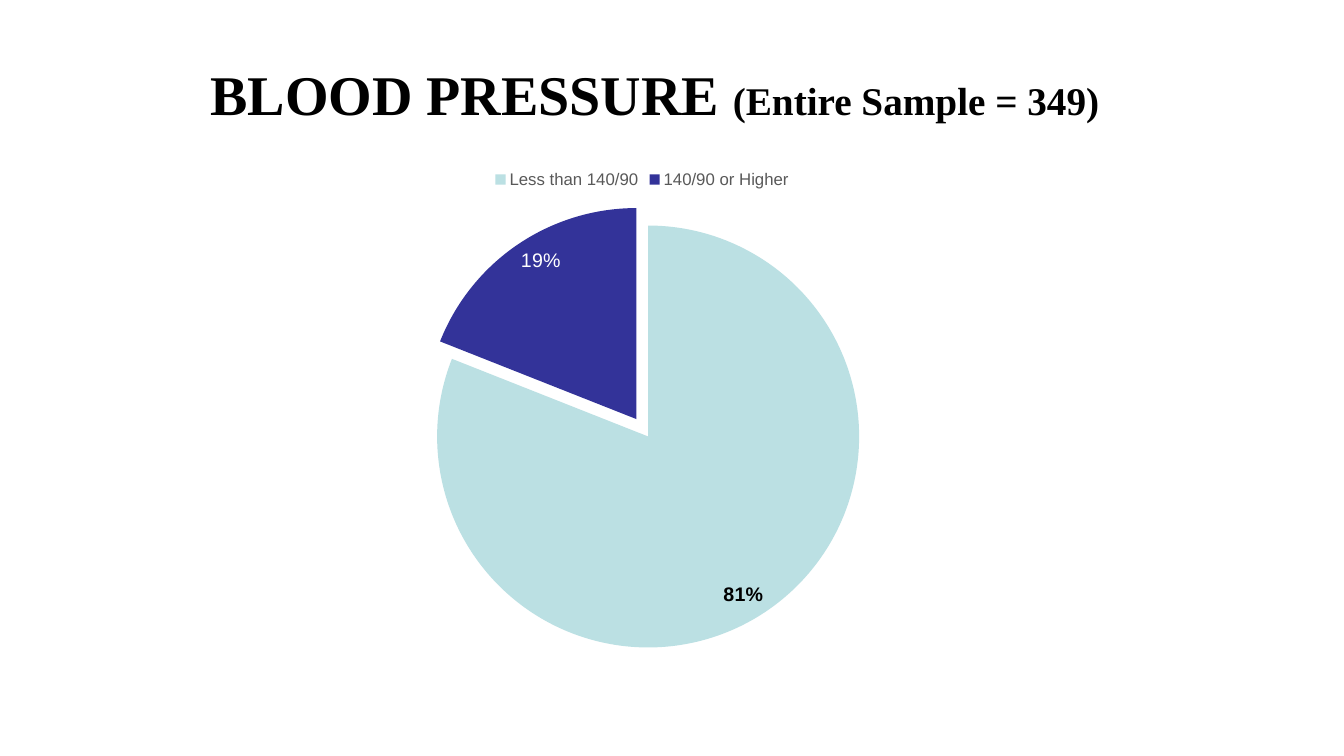
from lxml.etree import Element
from pptx import Presentation
from pptx.chart.data import CategoryChartData
from pptx.dml.color import RGBColor
from pptx.enum.chart import XL_CHART_TYPE, XL_LABEL_POSITION, XL_LEGEND_POSITION
from pptx.enum.text import MSO_ANCHOR, PP_ALIGN
from pptx.oxml.ns import qn
from pptx.util import Inches, Pt

BLACK = RGBColor(0x00, 0x00, 0x00)
WHITE = RGBColor(0xFF, 0xFF, 0xFF)
GRAY = RGBColor(0x59, 0x59, 0x59)
AQUA = RGBColor(0xBB, 0xE0, 0xE3)
NAVY = RGBColor(0x33, 0x33, 0x99)


def style(font, size, color, bold=False, name="Arial"):
    """Set the face, size, colour and weight of a font."""
    font.name, font.size, font.bold = name, Pt(size), bold
    font.color.rgb = color


def add_title(slide, left, top, width, height):
    """Place the centred title with its smaller sample note."""
    box = slide.shapes.add_textbox(left, top, width, height)
    frame = box.text_frame
    frame.word_wrap = True
    frame.vertical_anchor = MSO_ANCHOR.MIDDLE
    para = frame.paragraphs[0]
    para.alignment = PP_ALIGN.CENTER
    for text, size in (("BLOOD PRESSURE ", 40), ("(Entire Sample = 349)", 28)):
        run = para.add_run()
        run.text = text
        style(run.font, size, BLACK, True, "Times New Roman")


def add_pie(slide, left, top, width, height):
    """Place the exploded pie with its legend and percent labels."""
    data = CategoryChartData()
    data.categories = ["Less than 140/90", "140/90 or Higher"]
    data.add_series("Series 1", (81, 19))
    chart = slide.shapes.add_chart(
        XL_CHART_TYPE.PIE, left, top, width, height, data).chart
    style(chart.font, 10, BLACK)
    chart.has_title = False
    chart.has_legend = True
    chart.legend.position = XL_LEGEND_POSITION.TOP
    chart.legend.include_in_layout = False
    style(chart.legend.font, 12, GRAY)

    plot = chart.plots[0]
    plot.vary_by_categories = True
    series = plot.series[0]
    for index, color in enumerate((AQUA, NAVY)):
        fill = series.points[index].format.fill
        fill.solid()
        fill.fore_color.rgb = color
    burst = Element(qn("c:explosion"), val="5")
    series._element.find(qn("c:dPt")).addprevious(burst)

    labels = series.data_labels
    labels.show_percentage = True
    labels.show_value = False
    labels.number_format = "0%"
    labels.number_format_is_linked = False
    labels.position = XL_LABEL_POSITION.INSIDE_END
    style(labels.font, 14, BLACK, True)
    label = series.points[1].data_label
    run = label.text_frame.paragraphs[0].add_run()
    run.text = "19%"
    style(run.font, 14, WHITE)
    label.position = XL_LABEL_POSITION.INSIDE_END


def main():
    """Build the slide and save it."""
    deck = Presentation()
    deck.slide_width, deck.slide_height = Inches(13.33), Inches(7.5)
    slide = deck.slides.add_slide(deck.slide_layouts[6])
    add_title(slide, Inches(0.33), Inches(0.3), Inches(12.33), Inches(1.25))
    add_pie(slide, Inches(2.41), Inches(1.58), Inches(7.92), Inches(5))
    deck.save("out.pptx")


if __name__ == "__main__":
    main()
